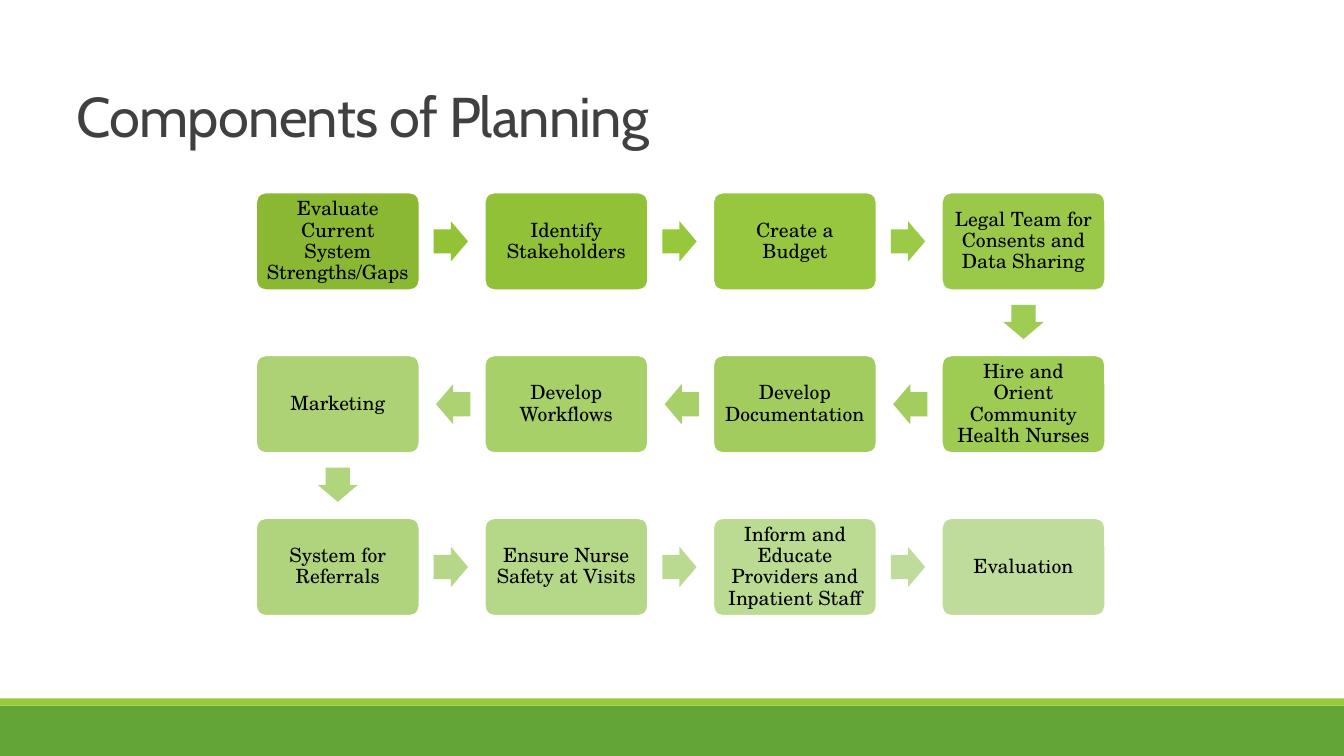
from dataclasses import dataclass
from typing import NamedTuple

from pptx import Presentation
from pptx.dml.color import RGBColor
from pptx.enum.shapes import MSO_SHAPE
from pptx.enum.text import MSO_ANCHOR, MSO_AUTO_SIZE, PP_ALIGN
from pptx.util import Inches, Pt

RECT = MSO_SHAPE.RECTANGLE
ROUND = MSO_SHAPE.ROUNDED_RECTANGLE
ARROW = MSO_SHAPE.RIGHT_ARROW
MIDDLE, BOTTOM = MSO_ANCHOR.MIDDLE, MSO_ANCHOR.BOTTOM
CENTER, LEFT = PP_ALIGN.CENTER, PP_ALIGN.LEFT
NO_FIT = MSO_AUTO_SIZE.NONE

WIDTH, HEIGHT = 13.33, 7.5


@dataclass(frozen=True)
class Theme:
    title_font: str = "Cabin"
    body_font: str = "TeX Gyre Schola"
    title_size: float = 40
    body_size: float = 14
    title_ink: str = "404040"
    body_ink: str = "000000"
    edge: str = "FFFFFF"
    base: str = "63A537"
    stripe: str = "99CB38"


@dataclass(frozen=True)
class Grid:
    """Boxes laid out in rows that run forth and back, in inches."""
    left: float = 2.54
    top: float = 1.91
    cols: int = 4
    col_step: float = 2.267
    row_step: float = 1.615
    box_w: float = 1.62
    box_h: float = 0.97

    def center(self, index: int) -> tuple[float, float]:
        row, col = divmod(index, self.cols)
        if row % 2:
            col = self.cols - 1 - col
        return (self.left + col * self.col_step + self.box_w / 2,
                self.top + row * self.row_step + self.box_h / 2)


class Step(NamedTuple):
    text: str
    fill: str
    arrow: str = ""


class Band(NamedTuple):
    top: float
    height: float
    fill: str


THEME = Theme()
GRID = Grid()
ARROW_W, ARROW_H = 0.34, 0.4
ARROW_SHARE = 0.495  # place of an arrow between two box centres

STEPS = [
    Step("Evaluate Current System Strengths/Gaps", "8BB833", "92C235"),
    Step("Identify Stakeholders", "91C137", "97C83C"),
    Step("Create a Budget", "96C73E", "9BCA47"),
    Step("Legal Team for Consents and Data Sharing", "9AC949", "9FCC52"),
    Step("Hire and Orient Community Health Nurses", "9ECB54", "A3CE5D"),
    Step("Develop Documentation", "A2CD5E", "A7D068"),
    Step("Develop Workflows", "A7D069", "ACD272"),
    Step("Marketing", "ACD273", "B0D57D"),
    Step("System for Referrals", "B0D47E", "B5D787"),
    Step("Ensure Nurse Safety at Visits", "B5D788", "BADA92"),
    Step("Inform and Educate Providers and Inpatient Staff", "BBDA92", "C0DC9C"),
    Step("Evaluation", "C0DC9D"),
]
BANDS = [Band(7, 0.5, THEME.base), Band(6.93, 0.07, THEME.stripe)]


def rgb(code: str) -> RGBColor:
    return RGBColor.from_string(code)


def add_form(slide, kind, x: float, y: float, w: float, h: float, fill: str):
    """Add a flat shape centred on x, y."""
    form = slide.shapes.add_shape(kind, Inches(x - w / 2), Inches(y - h / 2),
                                  Inches(w), Inches(h))
    form.shadow.inherit = False
    form.fill.solid()
    form.fill.fore_color.rgb = rgb(fill)
    form.line.fill.background()
    return form


def set_text(frame, text: str, face: str, size: float, ink: str,
             align, anchor, spacing: float):
    frame.text = text
    frame.word_wrap = True
    frame.auto_size = NO_FIT
    frame.vertical_anchor = anchor
    line = frame.paragraphs[0]
    line.alignment = align
    line.line_spacing = spacing
    run = line.runs[0]
    run.font.name = face
    run.font.size = Pt(size)
    run.font.color.rgb = rgb(ink)
    return run


def add_title(slide, text: str) -> None:
    title = slide.shapes.title
    title.left, title.top = Inches(0.66), Inches(0.44)
    title.width, title.height = Inches(8.62), Inches(1.09)
    run = set_text(title.text_frame, text, THEME.title_font, THEME.title_size,
                   THEME.title_ink, LEFT, BOTTOM, 0.85)
    run.font._element.set("spc", "-50")


def add_box(slide, index: int, step: Step) -> None:
    x, y = GRID.center(index)
    box = add_form(slide, ROUND, x, y, GRID.box_w, GRID.box_h, step.fill)
    box.adjustments[0] = 0.1
    box.line.color.rgb = rgb(THEME.edge)
    box.line.width = Pt(1.25)
    frame = box.text_frame
    frame.margin_left = frame.margin_right = Inches(0.06)
    frame.margin_top = frame.margin_bottom = Inches(0.06)
    set_text(frame, step.text, THEME.body_font, THEME.body_size,
             THEME.body_ink, CENTER, MIDDLE, 0.9)
    frame.paragraphs[0].space_after = Pt(0.35 * THEME.body_size)


def add_arrow(slide, index: int, fill: str) -> None:
    """Point from one box to the next."""
    x, y = GRID.center(index)
    next_x, next_y = GRID.center(index + 1)
    arrow = add_form(slide, ARROW, x + ARROW_SHARE * (next_x - x),
                     y + ARROW_SHARE * (next_y - y), ARROW_W, ARROW_H, fill)
    arrow.adjustments[0] = 0.6
    arrow.adjustments[1] = 0.5
    if next_y > y:
        arrow.rotation = 90
    elif next_x < x:
        arrow.rotation = 180


def main() -> None:
    deck = Presentation()
    deck.slide_width, deck.slide_height = Inches(WIDTH), Inches(HEIGHT)
    slide = deck.slides.add_slide(deck.slide_layouts.get_by_name("Title Only"))
    for band in BANDS:
        add_form(slide, RECT, WIDTH / 2, band.top + band.height / 2,
                 WIDTH, band.height, band.fill)
    for index, step in enumerate(STEPS):
        add_box(slide, index, step)
        if step.arrow:
            add_arrow(slide, index, step.arrow)
    add_title(slide, "Components of Planning")
    deck.save("out.pptx")


if __name__ == "__main__":
    main()
